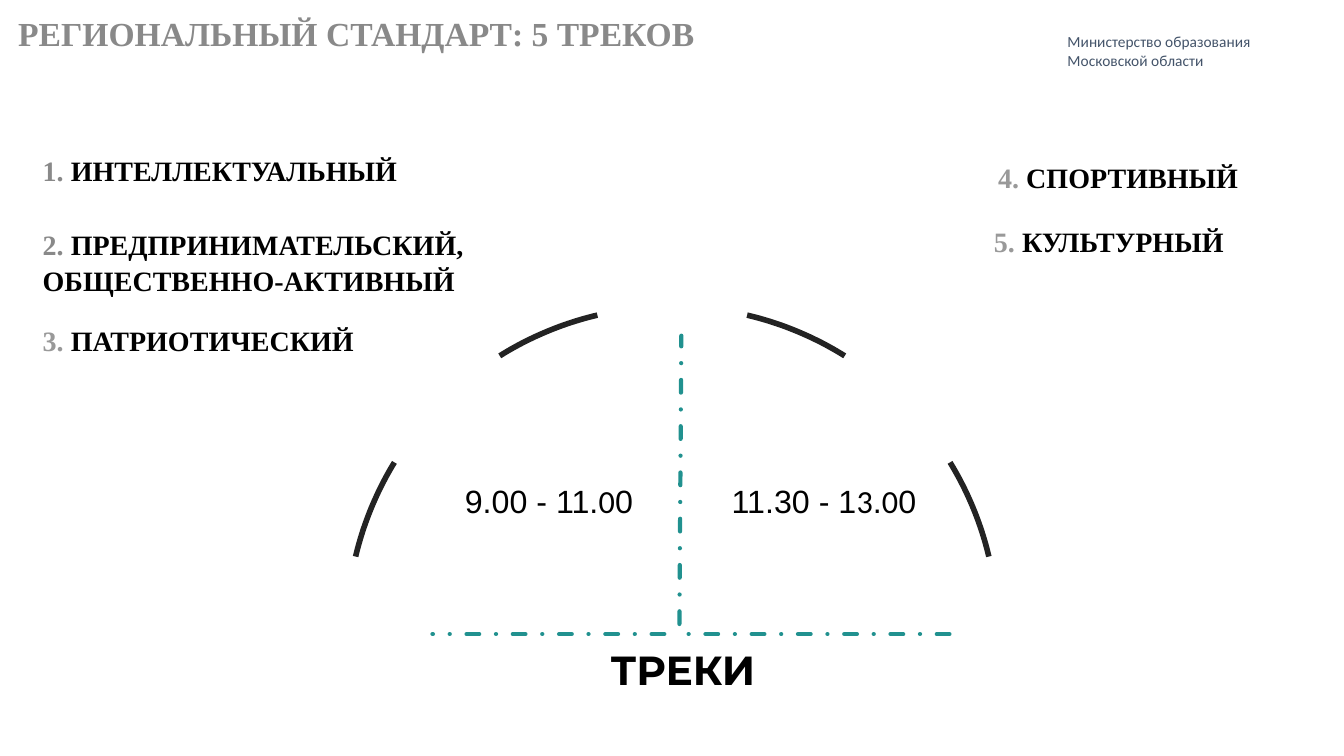
from dataclasses import dataclass
from math import cos, radians, sin

from lxml import etree
from pptx import Presentation
from pptx.dml.color import RGBColor
from pptx.enum.dml import MSO_LINE
from pptx.enum.shapes import MSO_CONNECTOR
from pptx.enum.text import MSO_ANCHOR, MSO_AUTO_SIZE, PP_ALIGN
from pptx.oxml.ns import qn
from pptx.util import Pt

STRAIGHT = MSO_CONNECTOR.STRAIGHT
DASH_DOT = MSO_LINE.DASH_DOT
TOP, MIDDLE = MSO_ANCHOR.TOP, MSO_ANCHOR.MIDDLE
LEFT, CENTER = PP_ALIGN.LEFT, PP_ALIGN.CENTER
NO_AUTOFIT = MSO_AUTO_SIZE.NONE
TWO_CONTENT = 3


@dataclass(frozen=True)
class Theme:
    black: str = "000000"
    gray: str = "898989"
    light_gray: str = "999999"
    slate: str = "44546A"
    teal: str = "21918F"
    arc: str = "232323"
    serif: str = "Times New Roman"
    sans: str = "Arial"
    office: str = "Calibri"
    display: str = "Montserrat"
    title_size: float = 24
    list_size: float = 20
    time_size: float = 23
    caption_size: float = 29
    note_size: float = 11
    list_spacing: float = 1.02


class SlideBuilder:
    def __init__(self, slide, theme):
        self.slide = slide
        self.theme = theme

    def frame(self, sp, box, anchor=TOP, insets=(0, 0)):
        """Place a text shape and return its text frame, ready for filling."""
        sp.left, sp.top, sp.width, sp.height = map(Pt, box)
        tf = sp.text_frame
        tf.word_wrap = True
        tf.auto_size = NO_AUTOFIT
        tf.vertical_anchor = anchor
        tf.margin_left = tf.margin_right = Pt(insets[0])
        tf.margin_top = tf.margin_bottom = Pt(insets[1])
        return tf

    def fill_paragraph(self, p, runs, size, bold=False, align=LEFT, spacing=1.0, before=0):
        """Fill a paragraph with (text, font, colour) runs."""
        p.alignment = align
        p.line_spacing = spacing
        p.space_before = Pt(before)
        for text, font, color in runs:
            r = p.add_run()
            r.text = text
            r.font.name = font
            r.font.size = Pt(size)
            r.font.bold = bold
            r.font.color.rgb = RGBColor.from_string(color)

    def title(self, text, box):
        t = self.theme
        tf = self.frame(self.slide.shapes.title, box)
        self.fill_paragraph(tf.paragraphs[0], [(text, t.serif, t.gray)],
                            t.title_size, True, spacing=t.list_spacing)

    def track_list(self, index, box, tracks):
        """Fill a body placeholder with (number, name, number colour, indent, space before)."""
        t = self.theme
        tf = self.frame(self.slide.placeholders[index], box)
        for i, (number, name, color, indent, before) in enumerate(tracks):
            p = tf.add_paragraph() if i else tf.paragraphs[0]
            pPr = p._p.get_or_add_pPr()
            pPr.set("marL", str(Pt(indent)))
            pPr.set("indent", "0")
            etree.SubElement(pPr, qn("a:buNone"))
            runs = [(name, t.serif, t.black)]
            if number:
                runs.insert(0, (f"{number}. ", t.serif, color))
            self.fill_paragraph(p, runs, t.list_size, True,
                                spacing=t.list_spacing, before=before)

    def text(self, box, runs, size, anchor=TOP, insets=(0, 0), **style):
        sp = self.slide.shapes.add_textbox(*map(Pt, box))
        tf = self.frame(sp, box, anchor, insets)
        self.fill_paragraph(tf.paragraphs[0], runs, size, **style)

    def arc(self, center, radius, start, end, steps=24):
        """Draw a circular arc between two angles in degrees, counted from the right."""
        angles = [radians(start + (end - start) * i / steps) for i in range(steps + 1)]
        points = [(Pt(center[0] + radius * cos(a)), Pt(center[1] - radius * sin(a)))
                  for a in angles]
        fb = self.slide.shapes.build_freeform(*points[0])
        fb.add_line_segments(points[1:], close=False)
        sp = fb.convert_to_shape()
        sp.shadow.inherit = False
        sp.fill.background()
        sp.line.color.rgb = RGBColor.from_string(self.theme.arc)
        sp.line.width = Pt(4)

    def dashed_line(self, *ends):
        sp = self.slide.shapes.add_connector(STRAIGHT, *map(Pt, ends))
        sp.line.color.rgb = RGBColor.from_string(self.theme.teal)
        sp.line.width = Pt(3)
        sp.line.dash_style = DASH_DOT
        spPr = sp._element.spPr
        spPr.find(qn("a:ln")).set("cap", "rnd")
        etree.SubElement(spPr, qn("a:effectLst"))


def main():
    prs = Presentation()
    prs.slide_width, prs.slide_height = Pt(960), Pt(540)
    t = Theme()
    s = SlideBuilder(prs.slides.add_slide(prs.slide_layouts[TWO_CONTENT]), t)

    s.title("РЕГИОНАЛЬНЫЙ СТАНДАРТ: 5 ТРЕКОВ", (13, 8.6, 786, 59))
    s.track_list(1, (30.5, 109.4, 460, 145), [
        (1, "ИНТЕЛЛЕКТУАЛЬНЫЙ", t.gray, 0, 0),
        (2, "ПРЕДПРИНИМАТЕЛЬСКИЙ,", t.gray, 0, 28),
        (None, "ОБЩЕСТВЕННО-АКТИВНЫЙ", t.gray, 0, 1.5),
        (3, "ПАТРИОТИЧЕСКИЙ", t.light_gray, 0, 18.5),
    ])
    s.track_list(2, (710, 114.5, 250, 80), [
        (4, "СПОРТИВНЫЙ", t.light_gray, 3, 0),
        (5, "КУЛЬТУРНЫЙ", t.light_gray, 0, 21),
    ])

    for start, end in ((13.4, 31.4), (58, 76.7)):
        s.arc((480.2, 451.4), 232.5, start, end)
        s.arc((480.2, 451.4), 232.5, 180 - end, 180 - start)

    s.dashed_line(485.3, 445.7, 486.7, 239.8)
    for right, left in ((474.5, 308.9), (678.2, 488.9)):
        s.dashed_line(right, 452.9, left, 452.9)

    time_slots = [
        ((326.2, 344.9, 131.8, 28.8),
         [("9.00 - 11.", t.sans), ("0", t.office), ("0", t.sans)]),
        ((514.1, 344.9, 149, 28.8),
         [("11.30 - 1", t.sans), ("3", t.office), (".", t.sans),
          ("0", t.office), ("0", t.sans)]),
    ]
    for box, parts in time_slots:
        s.text(box, [(text, font, t.black) for text, font in parts], t.time_size,
               MIDDLE, (2, 2), align=CENTER, spacing=0.9)

    s.text((295.2, 456.5, 385.2, 39.6), [("ТРЕКИ", t.display, t.black)],
           t.caption_size, bold=True, align=CENTER, spacing=1.13)
    s.text((753.1, 18, 201.6, 50.4),
           [("Министерство образования Московской области", t.office, t.slate)],
           t.note_size, insets=(9.4, 5))

    prs.save("out.pptx")


if __name__ == "__main__":
    main()
